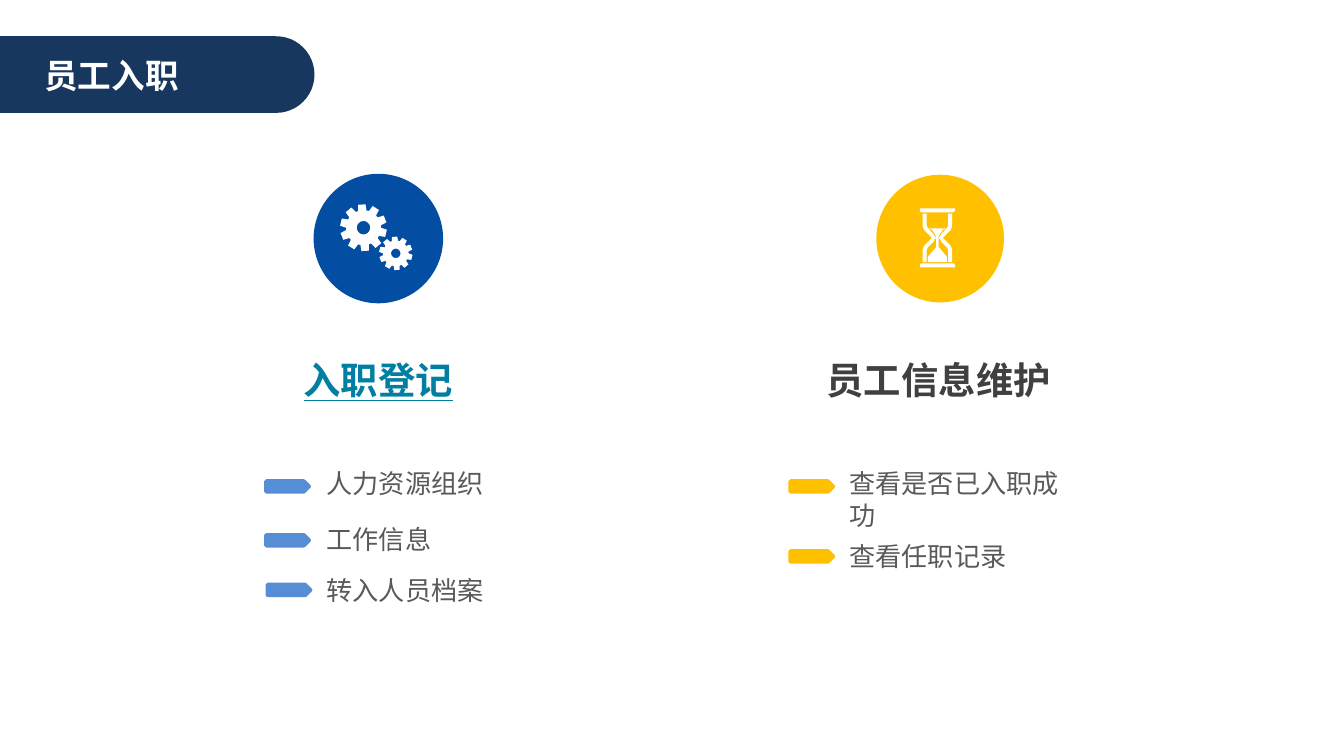
import math
import pptx
import pptx.dml.color
import pptx.enum.shapes
import pptx.enum.text
import pptx.oxml
import pptx.util
from pptx.util import Inches

FONT = "Noto Sans CJK SC"
WHITE = "FFFFFF"
TITLE = "员工入职"
TITLE_FORMAT = {"size": 18, "bold": True, "underline": False, "color": WHITE}
ITEM_FORMAT = {"size": 14, "bold": False, "underline": False, "color": "595959"}

COLUMNS = [
    {
        "heading": "入职登记",
        "heading_box": (2.02, 2.62, 1.59, 0.41),
        "heading_format": {"size": 20, "bold": True, "underline": True, "color": "007FA2"},
        "circle": (2.34, "034EA2", 1),
        "items": ["人力资源组织", "工作信息", "转入人员档案"],
        "list_box": (2.33, 3.43, 1.37, 1.14),
        "gaps": [0, 13, 10.5],
        "markers": ([(1.98, 3.58), (1.98, 3.98), (1.99, 4.35)], "558ED5"),
    },
    {
        "heading": "员工信息维护",
        "heading_box": (5.67, 2.62, 2.63, 0.41),
        "heading_format": {"size": 20, "bold": True, "underline": False, "color": "404040"},
        "circle": (6.52, "FFC000", 0),
        "items": ["查看是否已入职成功", "查看任职记录"],
        "list_box": (6.22, 3.43, 1.9, 0.89),
        "gaps": [0, 5.5],
        "markers": ([(5.88, 3.58), (5.88, 4.1)], "FFC000"),
    },
]

GEARS = [(2.705, 1.695, 0.175, 0.13, 0.05), (2.945, 1.885, 0.125, 0.095, 0.035)]
TEETH = 10
TOOTH_ANGLE = 14
TOOTH_PROFILE = [(-14, "root"), (-9, "tip"), (9, "tip"), (14, "root")]

HOURGLASS_CENTER = (6.975, 1.77)
CAP = [(-0.13, -0.22), (0.13, -0.22), (0.13, -0.2), (0.12, -0.19), (-0.12, -0.19), (-0.13, -0.2)]
GLASS_OUTER = [(-0.11, -0.18), (-0.11, -0.09), (-0.1, -0.06), (-0.08, -0.04), (-0.05, -0.01), (-0.04, 0)]
GLASS_INNER = [(-0.08, -0.18), (-0.08, -0.09), (-0.07, -0.07), (-0.03, -0.03), (-0.02, -0.01), (-0.01, 0)]
SAND = [(-0.07, -0.07), (-0.04, -0.06), (-0.02, -0.03), (-0.01, -0.01), (-0.01, 0.07),
        (-0.02, 0.08), (-0.07, 0.14), (-0.07, 0.18)]

presentation = pptx.Presentation()
presentation.slide_width = Inches(10)
presentation.slide_height = presentation.slide_width * 9 // 16
slide = presentation.slides.add_slide(presentation.slide_layouts[4])


def rgb(value):
    return pptx.dml.color.RGBColor.from_string(value)


def paint(shape, color, line_width=0):
    shape.shadow.inherit = False
    shape.fill.solid()
    shape.fill.fore_color.rgb = rgb(color)
    if line_width:
        shape.line.color.rgb = rgb(color)
        shape.line.width = pptx.util.Pt(line_width)
    else:
        shape.line.fill.background()


def add_preset(kind, box, color, line_width=0):
    preset = getattr(pptx.enum.shapes.MSO_SHAPE, kind)
    shape = slide.shapes.add_shape(preset, *map(Inches, box))
    paint(shape, color, line_width)
    return shape


def add_outline(contours, color):
    contours = [[(Inches(x), Inches(y)) for x, y in contour] for contour in contours]
    builder = slide.shapes.build_freeform(*contours[0][0], scale=1.0)
    for index, contour in enumerate(contours):
        if index:
            builder.move_to(*contour[0])
        builder.add_line_segments(contour[1:], close=True)
    paint(builder.convert_to_shape(), color)


def fill_text(shape, box, lines, text_format, align, margins, anchor="TOP", gaps=(0,)):
    for name, value in zip(("left", "top", "width", "height"), box):
        setattr(shape, name, Inches(value))
    frame = shape.text_frame
    frame_format = {
        "word_wrap": True,
        "auto_size": pptx.enum.text.MSO_AUTO_SIZE.NONE,
        "vertical_anchor": getattr(pptx.enum.text.MSO_ANCHOR, anchor),
        "margin_left": Inches(margins[0]),
        "margin_right": Inches(margins[0]),
        "margin_top": Inches(margins[1]),
        "margin_bottom": Inches(margins[1]),
    }
    for name, value in frame_format.items():
        setattr(frame, name, value)
    frame.text = "\n".join(lines)
    font_format = {
        "name": FONT,
        "size": pptx.util.Pt(text_format["size"]),
        "bold": text_format["bold"],
        "underline": text_format["underline"],
    }
    for paragraph, gap in zip(frame.paragraphs, gaps):
        paragraph.alignment = getattr(pptx.enum.text.PP_ALIGN, align)
        paragraph.space_before = pptx.util.Pt(gap)
        properties = paragraph._p.get_or_add_pPr()
        properties.set("marL", "0")
        properties.set("indent", "0")
        properties.append(pptx.oxml.parse_xml(
            f'<a:buNone {pptx.oxml.ns.nsdecls("a")}/>'))
        for run in paragraph.runs:
            for name, value in font_format.items():
                setattr(run.font, name, value)
            run.font.color.rgb = rgb(text_format["color"])
            run_properties = run._r.get_or_add_rPr()
            run_properties.append(pptx.oxml.parse_xml(
                f'<a:ea {pptx.oxml.ns.nsdecls("a")} typeface="{FONT}"/>'))


def ring_point(center_x, center_y, radius, degrees):
    angle = math.radians(degrees)
    return center_x + radius * math.cos(angle), center_y + radius * math.sin(angle)


def flip(points, x_sign, y_sign):
    return [(x * x_sign, y * y_sign) for x, y in points]


def place_hourglass(contours):
    center_x, center_y = HOURGLASS_CENTER
    add_outline([[(center_x + x, center_y + y) for x, y in contour]
                 for contour in contours], WHITE)


tab = add_preset("ROUNDED_RECTANGLE", (-0.3, 0.27, 2.64, 0.57), "17375E")
tab.adjustments[0] = 0.5
title = slide.shapes.title
title.element.addprevious(tab.element)
fill_text(title, (0.23, 0.36, 2.01, 0.4), [TITLE], TITLE_FORMAT, "LEFT", (0.1, 0.05), "TOP")

for index, column in enumerate(COLUMNS):
    heading = slide.placeholders[2 * index + 1]
    item_list = slide.placeholders[2 * index + 2]
    fill_text(heading, column["heading_box"], [column["heading"]],
              column["heading_format"], "CENTER", (0.07, 0.04))
    fill_text(item_list, column["list_box"], column["items"], ITEM_FORMAT,
              "LEFT", (0.1, 0.05), gaps=column["gaps"])
    circle_left, circle_color, circle_line = column["circle"]
    add_preset("OVAL", (circle_left, 1.3, 0.95, 0.95), circle_color, circle_line)
    marker_corners, marker_color = column["markers"]
    for marker_left, marker_top in marker_corners:
        add_preset("PENTAGON", (marker_left, marker_top, 0.32, 0.08), marker_color, 2)

for center_x, center_y, tip, root, hole in GEARS:
    radii = {"tip": tip, "root": root}
    rim = [ring_point(center_x, center_y, radii[level],
                      TOOTH_ANGLE + tooth * 360 / TEETH + offset)
           for tooth in range(TEETH) for offset, level in TOOTH_PROFILE]
    bore = [ring_point(center_x, center_y, hole, -degrees) for degrees in range(0, 360, 15)]
    add_outline([rim, bore], WHITE)

glass = (GLASS_OUTER + flip(GLASS_OUTER, 1, -1)[-2::-1]
         + flip(GLASS_INNER, 1, -1) + GLASS_INNER[-2::-1])
place_hourglass([CAP, flip(CAP, 1, -1)])
place_hourglass([glass, flip(glass, -1, 1)])
place_hourglass([SAND + flip(SAND, -1, 1)[::-1]])

presentation.save("out.pptx")
